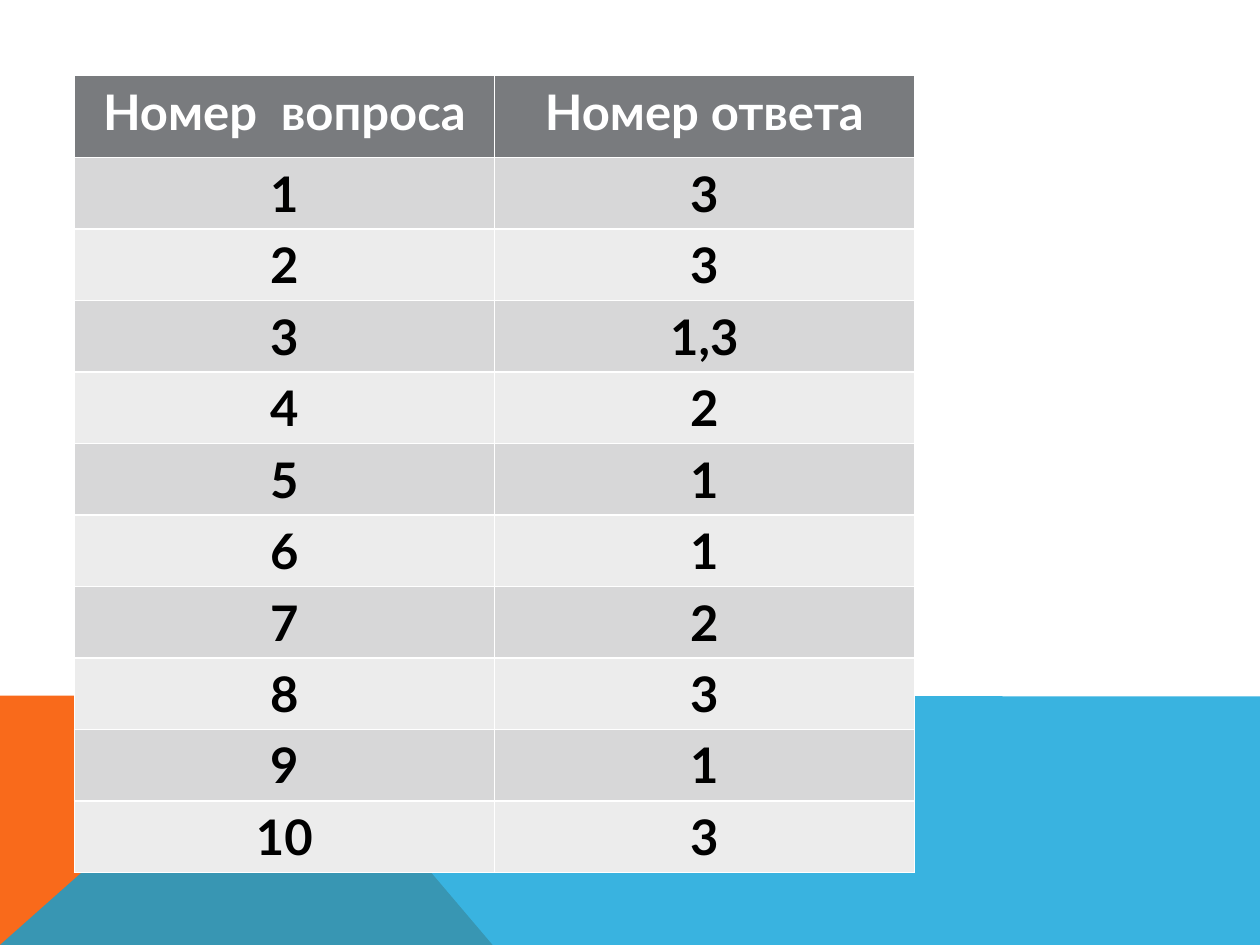
"""Build the answer key slide: a two-column table over a coloured footer."""
from pptx import Presentation
from pptx.dml.color import RGBColor
from pptx.enum.text import PP_ALIGN
from pptx.oxml.ns import qn
from pptx.util import Pt


def paint(fill, color, alpha=None):
    fill.solid()
    fill.fore_color.rgb = RGBColor.from_string(color)
    if alpha is not None:
        clr = sp._element.spPr.find(".//" + qn("a:srgbClr"))
        clr.makeelement(qn("a:alpha"), {})
        etree_alpha = clr.makeelement(qn("a:alpha"), {"val": str(alpha * 1000)})
        clr.append(etree_alpha)


prs = Presentation()
prs.slide_width, prs.slide_height = Pt(720), Pt(540)
s = prs.slides.add_slide(prs.slide_layouts[6])

footer = [
    ([(0, 540), (0, 397.5), (160.5, 397.5), (281.5, 540)], "F96A1B", None),
    ([(0, 540), (160.5, 397.5), (720, 398), (720, 540)], "08A1D9", 80),
]
for points, color, alpha in footer:
    (x, y), *rest = [(Pt(x), Pt(y)) for x, y in points]
    fb = s.shapes.build_freeform(x, y)
    fb.add_line_segments(rest, close=True)
    sp = fb.convert_to_shape()
    sp.shadow.inherit = False
    sp.line.fill.background()
    paint(sp.fill, color, alpha)

answers = ["3", "3", "1,3", "2", "1", "1", "2", "3", "1", "3"]
rows = [("Номер  вопроса", "Номер ответа")]
rows += [(str(i), answer) for i, answer in enumerate(answers, 1)]

header_h, row_h = 46.8, 40.8
table = s.shapes.add_table(
    len(rows), 2, Pt(42.5), Pt(43.2), Pt(480), Pt(header_h + row_h * len(answers))
).table
for i, row in enumerate(rows):
    table.rows[i].height = Pt(row_h if i else header_h)
    for j, text in enumerate(row):
        cell = table.cell(i, j)
        paint(cell.fill, ("D7D7D8" if i % 2 else "ECECEC") if i else "797B7E")
        p = cell.text_frame.paragraphs[0]
        p.text = text
        p.alignment = PP_ALIGN.CENTER
        font = p.runs[0].font
        font.name, font.size, font.bold = "Lato", Pt(28), True
        paint(font.fill, "000000" if i else "FFFFFF")

prs.save("out.pptx")
